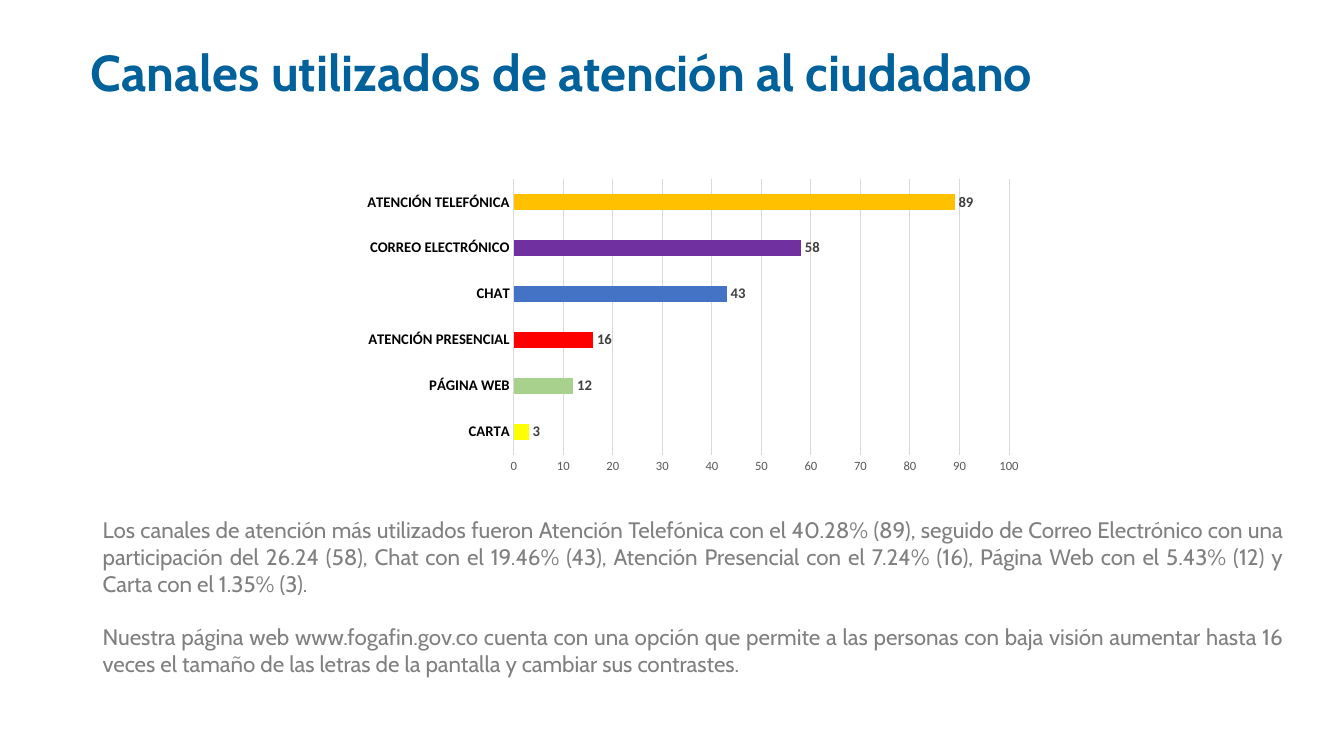
from pptx import Presentation
from pptx.chart.data import CategoryChartData
from pptx.dml.color import RGBColor
from pptx.enum.chart import XL_CHART_TYPE, XL_LABEL_POSITION, XL_TICK_MARK
from pptx.enum.text import MSO_ANCHOR, MSO_AUTO_SIZE, PP_ALIGN
from pptx.util import Pt

BAR_CLUSTERED = XL_CHART_TYPE.BAR_CLUSTERED
OUTSIDE_END = XL_LABEL_POSITION.OUTSIDE_END
NO_TICKS = XL_TICK_MARK.NONE
MIDDLE = MSO_ANCHOR.MIDDLE
FIT_SHAPE = MSO_AUTO_SIZE.SHAPE_TO_FIT_TEXT
LEFT, JUSTIFY = PP_ALIGN.LEFT, PP_ALIGN.JUSTIFY

THEME = {
    "title": {"name": "Cabin", "size": Pt(36), "bold": True, "color": "01619B"},
    "body": {"name": "Cabin", "size": Pt(16), "bold": False, "color": "808080"},
    "chart": {"name": "Calibri", "size": Pt(10), "bold": False, "color": "000000"},
    "category": {"name": "Calibri", "size": Pt(10.5), "bold": True, "color": "000000"},
    "scale": {"name": "Calibri", "size": Pt(9), "bold": False, "color": "595959"},
    "value": {"name": "Calibri", "size": Pt(10.5), "bold": True, "color": "404040"},
    "grid": "D9D9D9",
}

CHANNELS = [
    ("CARTA", 3, "FFFF00"),
    ("PÁGINA WEB", 12, "A9D18E"),
    ("ATENCIÓN PRESENCIAL", 16, "FF0000"),
    ("CHAT", 43, "4472C4"),
    ("CORREO ELECTRÓNICO", 58, "7030A0"),
    ("ATENCIÓN TELEFÓNICA", 89, "FFC000"),
]

COMMENTS = [
    "Los canales de atención más utilizados fueron Atención Telefónica con el 40.28% (89), "
    "seguido de Correo Electrónico con una participación del 26.24 (58), Chat con el 19.46% (43), "
    "Atención Presencial con el 7.24% (16), Página Web con el 5.43% (12) y Carta con el 1.35% (3).",
    "Nuestra página web www.fogafin.gov.co cuenta con una opción que permite a las personas con "
    "baja visión aumentar hasta 16 veces el tamaño de las letras de la pantalla y cambiar sus contrastes.",
]


def apply_font(font, role):
    for attribute, value in THEME[role].items():
        if attribute == "color":
            font.color.rgb = RGBColor.from_string(value)
        else:
            setattr(font, attribute, value)


presentation = Presentation()
presentation.slide_width, presentation.slide_height = Pt(960), Pt(540)
slide = presentation.slides.add_slide(presentation.slide_layouts[5])

# Title
title = slide.shapes.title
title.left, title.top, title.width, title.height = Pt(57.6), Pt(14.4), Pt(762.5), Pt(78.5)
title.text_frame.text = "Canales utilizados de atención al ciudadano"
title.text_frame.vertical_anchor = MIDDLE
paragraph = title.text_frame.paragraphs[0]
paragraph.alignment = LEFT
paragraph.line_spacing = 0.9
apply_font(paragraph.runs[0].font, "title")

# Comments below the chart
comment_box = slide.shapes.add_textbox(Pt(66.2), Pt(365), Pt(858.2), Pt(123.8))
text_frame = comment_box.text_frame
text_frame.word_wrap = True
text_frame.auto_size = FIT_SHAPE
for index, comment in enumerate(COMMENTS):
    paragraph = text_frame.add_paragraph() if index else text_frame.paragraphs[0]
    paragraph.alignment = JUSTIFY
    if index:
        paragraph.space_before = Pt(19)
    run = paragraph.add_run()
    run.text = comment
    apply_font(run.font, "body")

# Bar chart of channels
chart_data = CategoryChartData()
chart_data.categories = [name for name, count, color in CHANNELS]
chart_data.add_series("Series 1", [count for name, count, color in CHANNELS])
chart = slide.shapes.add_chart(
    BAR_CLUSTERED, Pt(252.7), Pt(123.8), Pt(484.6), Pt(218.9), chart_data
).chart
chart.has_legend = False
chart.has_title = False
apply_font(chart.font, "chart")

for axis, role in ((chart.category_axis, "category"), (chart.value_axis, "scale")):
    axis.major_tick_mark = axis.minor_tick_mark = NO_TICKS
    apply_font(axis.tick_labels.font, role)
chart.value_axis.minimum_scale = 0
chart.value_axis.maximum_scale = 100
chart.value_axis.major_unit = 10
chart.value_axis.format.line.fill.background()
for line in (chart.category_axis.format.line, chart.value_axis.major_gridlines.format.line):
    line.width = Pt(0.75)
    line.color.rgb = RGBColor.from_string(THEME["grid"])

plot = chart.plots[0]
plot.gap_width = 182
plot.vary_by_categories = False
plot.has_data_labels = True
plot.data_labels.show_value = True
plot.data_labels.position = OUTSIDE_END
apply_font(plot.data_labels.font, "value")
for index, (name, count, color) in enumerate(CHANNELS):
    fill = plot.series[0].points[index].format.fill
    fill.solid()
    fill.fore_color.rgb = RGBColor.from_string(color)

presentation.save("out.pptx")
